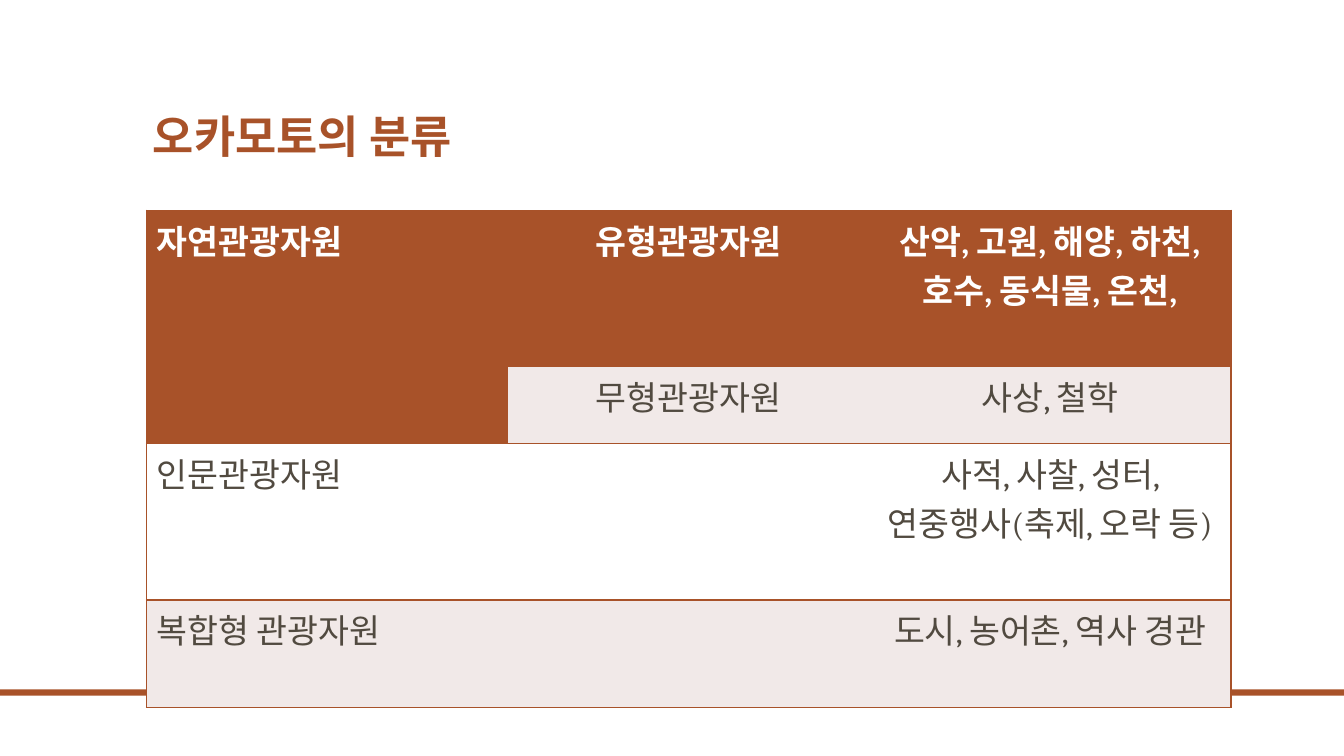
"""Build a slide with a table of tourism resource classes."""
from dataclasses import dataclass

import pptx
import pptx.dml.color
import pptx.enum.shapes
import pptx.enum.text
import pptx.oxml
import pptx.oxml.ns
import pptx.util
from lxml import etree
from pptx.util import Cm


@dataclass(frozen=True)
class Theme:
    """Colours, fonts and type sizes of the slide."""
    accent: str = "A85229"
    ink: str = "514A40"
    white: str = "FFFFFF"
    band: str = "F1E9E8"
    latin: str = "Cambria"
    hangul: str = "Noto Sans CJK JP"
    title_size: int = 32
    cell_size: int = 24
    border_width: int = 1
    plain_table: str = "{2D5ABB26-0587-4C30-8999-92F81FD0307C}"


THEME = Theme()
ALIGN = pptx.enum.text.PP_ALIGN
ROWS = [
    ("자연관광자원", "유형관광자원", "산악, 고원, 해양, 하천, 호수, 동식물, 온천,"),
    ("", "무형관광자원", "사상, 철학"),
    ("인문관광자원", "", "사적, 사찰, 성터, 연중행사(축제, 오락 등)"),
    ("복합형 관광자원", "", "도시, 농어촌, 역사 경관"),
]
ROW_FILLS = [THEME.accent, THEME.band, THEME.white, THEME.band]
ROW_HEIGHTS = [3.33, 1.94, 3.33, 1.94]
COLUMN_WIDTH = 9.11
MERGES = [((0, 0), (1, 0)), ((2, 0), (2, 1)), ((3, 0), (3, 1))]


def rgb(code):
    """Turn a hex code into a colour."""
    return pptx.dml.color.RGBColor.from_string(code)


def add_text(para, text, size, colour, bold, latin):
    """Add one formatted run to a paragraph."""
    span = para.add_run()
    span.text = text
    font = span.font
    font.size = pptx.util.Pt(size)
    font.bold = bold
    font.color.rgb = rgb(colour)
    font.name = latin
    properties = span._r.get_or_add_rPr()
    east_asian = etree.SubElement(properties, pptx.oxml.ns.qn("a:ea"))
    east_asian.set("typeface", THEME.hangul)


def add_title(page, text):
    """Place and format the title placeholder."""
    box = page.shapes.title
    box.left, box.top, box.width, box.height = Cm(3.6), Cm(1.07), Cm(26.67), Cm(3.18)
    frame = box.text_frame
    frame.vertical_anchor = pptx.enum.text.MSO_ANCHOR.BOTTOM
    para = frame.paragraphs[0]
    para.alignment = ALIGN.LEFT
    para.line_spacing = 0.9
    add_text(para, text, THEME.title_size, THEME.accent, True, THEME.hangul)


def add_footer_bar(page, width):
    """Draw the thin bar across the foot of the slide."""
    bar = page.shapes.add_shape(
        pptx.enum.shapes.MSO_SHAPE.RECTANGLE, 0, Cm(17.37), width, Cm(0.16))
    bar.shadow.inherit = False
    bar.fill.solid()
    bar.fill.fore_color.rgb = rgb(THEME.accent)
    bar.line.fill.background()


def add_borders(cell, sides):
    """Give a cell accent lines on the named sides."""
    properties = cell._tc.get_or_add_tcPr()
    width = pptx.util.Pt(THEME.border_width)
    for side in sides:
        properties.append(pptx.oxml.parse_xml(
            f'<a:ln{side} {pptx.oxml.ns.nsdecls("a")} w="{width}"><a:solidFill>'
            f'<a:srgbClr val="{THEME.accent}"/></a:solidFill></a:ln{side}>'))


def fill_cell(cell, text, fill, align, header, sides):
    """Set the borders, fill and text of one cell."""
    add_borders(cell, sides)
    cell.fill.solid()
    cell.fill.fore_color.rgb = rgb(fill)
    if text:
        para = cell.text_frame.paragraphs[0]
        para.alignment = align
        colour = THEME.white if header else THEME.ink
        add_text(para, text, THEME.cell_size, colour, header, THEME.latin)


def add_resource_table(page):
    """Add the table of resource classes."""
    columns = len(ROWS[0])
    frame = page.shapes.add_table(
        len(ROWS), columns, Cm(3.69), Cm(5.3),
        Cm(COLUMN_WIDTH * columns), Cm(sum(ROW_HEIGHTS)))
    table = frame.table
    table.horz_banding = False
    table._tbl.tblPr.find(pptx.oxml.ns.qn("a:tableStyleId")).text = THEME.plain_table
    for column in table.columns:
        column.width = Cm(COLUMN_WIDTH)
    for index, (row, texts) in enumerate(zip(table.rows, ROWS)):
        row.height = Cm(ROW_HEIGHTS[index])
        for place, text in enumerate(texts):
            first, last = place == 0, place == columns - 1
            sides = ["L"] * first + ["R"] * last + ["T", "B"]
            align = ALIGN.LEFT if first else ALIGN.CENTER
            fill_cell(table.cell(index, place), text, ROW_FILLS[index],
                      align, index == 0, sides)
    for start, end in MERGES:
        table.cell(*start).merge(table.cell(*end))


def main():
    """Build and save the deck."""
    deck = pptx.Presentation()
    deck.slide_width, deck.slide_height = Cm(33.87), Cm(19.05)
    page = deck.slides.add_slide(deck.slide_layouts.get_by_name("Title Only"))
    add_footer_bar(page, deck.slide_width)
    add_title(page, "오카모토의 분류")
    add_resource_table(page)
    deck.save("out.pptx")


if __name__ == "__main__":
    main()
